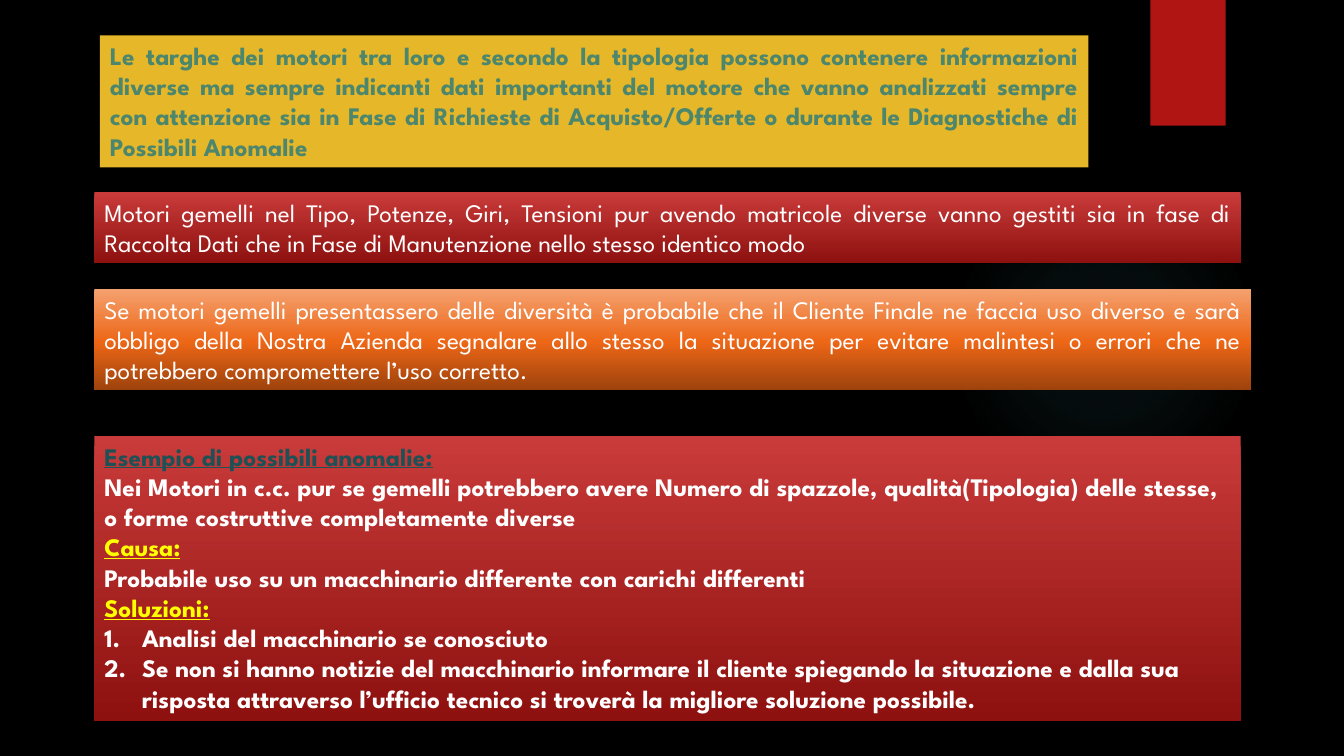
from lxml import etree
from pptx import Presentation
from pptx.dml.color import RGBColor
from pptx.enum.shapes import MSO_SHAPE
from pptx.enum.text import MSO_ANCHOR, MSO_AUTO_SIZE, PP_ALIGN
from pptx.oxml.ns import qn
from pptx.util import Cm, Pt

RECTANGLE, ELLIPSE = MSO_SHAPE.RECTANGLE, MSO_SHAPE.OVAL
JUSTIFY, LEFT = PP_ALIGN.JUSTIFY, PP_ALIGN.LEFT
TOP = MSO_ANCHOR.TOP
GROW = MSO_AUTO_SIZE.SHAPE_TO_FIT_TEXT

COLORS = {
    "black": "000000", "ribbon": "B01513", "gold": "E6B729", "green": "4B866D",
    "white": "FFFFFF", "yellow": "FFFF00", "teal": "1E5155", "glow": "50B9C1",
    "red_light": "C93B3A", "red_dark": "8D110F",
    "orange_dark": "9D420C", "orange": "ED6717", "orange_light": "F4A16F",
}
# Gradient stops: position %, colour, opacity %
RED = [(0, "red_light", 100), (100, "red_dark", 100)]
ORANGE = [(0, "orange_light", 100), (52, "orange", 100), (100, "orange_dark", 100)]
GLOW = [(0, "glow", 7), (36, "glow", 6), (69, "glow", 0)]


def add_panel(slide, kind, box, fill):
    """Add a borderless shape with a plain colour or a gradient."""
    shape = slide.shapes.add_shape(kind, *[Cm(value) for value in box])
    if isinstance(fill, str):
        shape.fill.solid()
        shape.fill.fore_color.rgb = RGBColor.from_string(COLORS[fill])
    else:
        gradient = etree.SubElement(shape._element.spPr, qn("a:gradFill"), rotWithShape="1")
        stops = etree.SubElement(gradient, qn("a:gsLst"))
        for position, color, opacity in fill:
            stop = etree.SubElement(stops, qn("a:gs"), pos=str(position * 1000))
            tint = etree.SubElement(stop, qn("a:srgbClr"), val=COLORS[color])
            etree.SubElement(tint, qn("a:alpha"), val=str(opacity * 1000))
        if kind == ELLIPSE:
            circle = etree.SubElement(gradient, qn("a:path"), path="circle")
            etree.SubElement(circle, qn("a:fillToRect"), l="50000", t="50000", r="50000", b="50000")
        else:
            etree.SubElement(gradient, qn("a:lin"), ang="5400000", scaled="0")
    shape.line.fill.background()
    shape.shadow.inherit = False
    return shape


presentation = Presentation()
presentation.slide_width, presentation.slide_height = Cm(33.87), Cm(19.05)
slide = presentation.slides.add_slide(presentation.slide_layouts[6])
slide.background.fill.solid()
slide.background.fill.fore_color.rgb = RGBColor.from_string(COLORS["black"])

# Backdrop
add_panel(slide, ELLIPSE, (23.9, 4.65, 7.82, 7.82), GLOW)
add_panel(slide, RECTANGLE, (28.99, 0, 1.9, 3.17), "ribbon")

# Text panels: box, fill, alignment, paragraphs (text, colour, bold, underline, numbered)
panels = [
    ((2.52, 0.89, 24.91, 3.33), "gold", JUSTIFY, [
        ("Le targhe dei motori tra loro e secondo la tipologia possono contenere informazioni "
         "diverse ma sempre indicanti dati importanti del motore che vanno analizzati sempre "
         "con attenzione sia in Fase di Richieste di Acquisto/Offerte o durante le Diagnostiche "
         "di Possibili Anomalie", "green", True, False, False)]),
    ((2.38, 4.84, 28.89, 1.8), RED, JUSTIFY, [
        ("Motori gemelli nel Tipo, Potenze, Giri, Tensioni pur avendo matricole diverse vanno "
         "gestiti sia in fase di Raccolta Dati che in Fase di Manutenzione nello stesso "
         "identico modo", "white", False, False, False)]),
    ((2.38, 7.28, 29.15, 2.56), ORANGE, JUSTIFY, [
        ("Se motori gemelli presentassero delle diversità è probabile che il Cliente Finale ne "
         "faccia uso diverso e sarà obbligo della Nostra Azienda segnalare allo stesso la "
         "situazione per evitare malintesi o errori che ne potrebbero compromettere l’uso "
         "corretto.", "white", False, False, False)]),
    ((2.38, 10.99, 28.89, 7.18), RED, LEFT, [
        ("Esempio di possibili anomalie:", "teal", True, True, False),
        ("Nei Motori in c.c. pur se gemelli potrebbero avere Numero di spazzole, "
         "qualità(Tipologia) delle stesse, o forme costruttive completamente diverse",
         "white", True, False, False),
        ("Causa:", "yellow", True, True, False),
        ("Probabile uso su un macchinario differente con carichi differenti",
         "white", True, False, False),
        ("Soluzioni:", "yellow", True, True, False),
        ("Analisi del macchinario se conosciuto", "white", True, False, True),
        ("Se non si hanno notizie del macchinario informare il cliente spiegando la situazione "
         "e dalla sua risposta attraverso l’ufficio tecnico si troverà la migliore soluzione "
         "possibile.", "white", True, False, True)]),
]
for box, fill, alignment, paragraphs in panels:
    frame = add_panel(slide, RECTANGLE, box, fill).text_frame
    frame_format = {"word_wrap": True, "auto_size": GROW, "vertical_anchor": TOP}
    for name, value in frame_format.items():
        setattr(frame, name, value)
    for index, (text, color, bold, underline, numbered) in enumerate(paragraphs):
        paragraph = frame.add_paragraph() if index else frame.paragraphs[0]
        paragraph.alignment = alignment
        if numbered:
            properties = paragraph._p.get_or_add_pPr()
            properties.set("marL", str(Cm(0.95)))
            properties.set("indent", str(-Cm(0.95)))
            etree.SubElement(properties, qn("a:buFont"), typeface="+mj-lt")
            etree.SubElement(properties, qn("a:buAutoNum"), type="arabicPeriod")
        run = paragraph.add_run()
        run.text = text
        font_format = {"name": "League Spartan", "size": Pt(18), "bold": bold, "underline": underline}
        for name, value in font_format.items():
            setattr(run.font, name, value)
        run.font.color.rgb = RGBColor.from_string(COLORS[color])

presentation.save("out.pptx")
